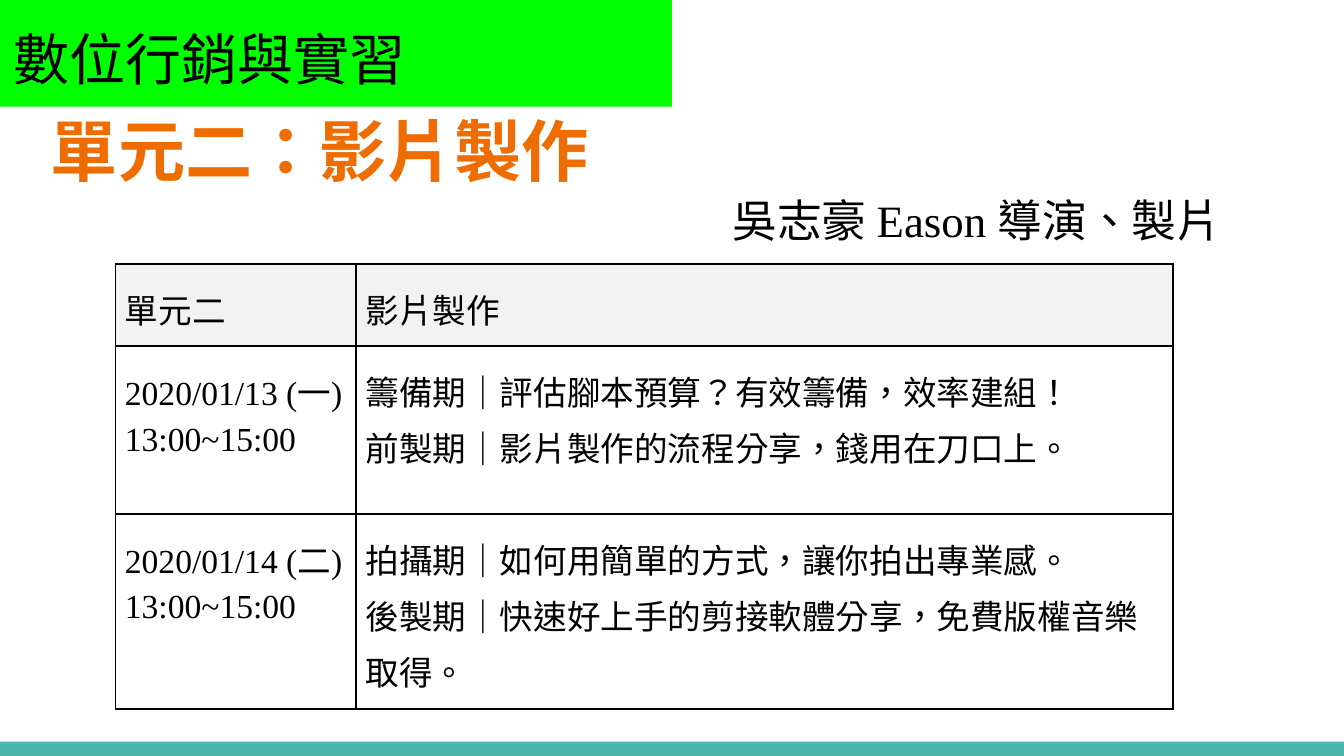
from itertools import groupby

from lxml.etree import SubElement
from pptx import Presentation
from pptx.dml.color import RGBColor
from pptx.enum.shapes import MSO_SHAPE
from pptx.enum.text import MSO_ANCHOR, PP_ALIGN
from pptx.oxml.ns import qn
from pptx.util import Inches, Pt

SLIDE_WIDTH = Inches(10)
SLIDE_HEIGHT = SLIDE_WIDTH * 9 // 16

BLACK = RGBColor(0x00, 0x00, 0x00)
ORANGE = RGBColor(0xEF, 0x6C, 0x00)
GREEN = RGBColor(0x00, 0xFF, 0x00)
TEAL = RGBColor(0x4D, 0xB6, 0xAC)
LIGHT_GRAY = RGBColor(0xF2, 0xF2, 0xF2)

SERIF, SANS, NARROW = "Times New Roman", "Arial", "Arial Narrow"
SANS_CHARACTERS = "一二⽚⽤⼑⼝⽅⼿⾳"  # set in the sans font inside serif text
LANGUAGE = "zh-TW"

SCHEDULE = [
    (["單元二"], ["影⽚製作"]),
    (["2020/01/13 (一)", "13:00~15:00"],
     ["籌備期｜評估腳本預算？有效籌備，效率建組！",
      "前製期｜影⽚製作的流程分享，錢⽤在⼑⼝上。"]),
    (["2020/01/14 (二)", "13:00~15:00"],
     ["拍攝期｜如何⽤簡單的⽅式，讓你拍出專業感。",
      "後製期｜快速好上⼿的剪接軟體分享，免費版權⾳樂取得。"]),
]
COLUMN_WIDTHS = [17.9, 60.8]       # percent of the slide width
ROW_HEIGHTS = [10.9, 22.2, 25.8]   # percent of the slide height


def across(percent):
    return round(SLIDE_WIDTH * percent / 100)


def down(percent):
    return round(SLIDE_HEIGHT * percent / 100)


def area(left, top, width, height):
    """Turn percentages of the slide into a position and size."""
    return across(left), down(top), across(width), down(height)


def write_text(frame, lines, size, font=SERIF, color=BLACK, bold=False,
               line_spacing=1.15, space=0, anchor=MSO_ANCHOR.TOP):
    frame.word_wrap = True
    frame.vertical_anchor = anchor
    for index, line in enumerate(lines):
        paragraph = frame.paragraphs[0] if index == 0 else frame.add_paragraph()
        paragraph.alignment = PP_ALIGN.LEFT
        paragraph.line_spacing = line_spacing
        paragraph.space_before = paragraph.space_after = Pt(space)
        for is_sans, characters in groupby(line, lambda c: c in SANS_CHARACTERS):
            run = paragraph.add_run()
            run.text = "".join(characters)
            run.font.name = SANS if is_sans and font == SERIF else font
            run.font.size = Pt(size)
            run.font.bold = bold
            run.font.color.rgb = color
            run._r.get_or_add_rPr().set("lang", LANGUAGE)


def set_margins(frame):
    frame.margin_left = frame.margin_right = Inches(0.1)
    frame.margin_top = frame.margin_bottom = Inches(0.1)


def add_band(slide, position, color):
    band = slide.shapes.add_shape(MSO_SHAPE.RECTANGLE, *position)
    band.shadow.inherit = False
    band.fill.solid()
    band.fill.fore_color.rgb = color
    band.line.fill.background()
    set_margins(band.text_frame)
    return band


def add_label(slide, position, text, **text_format):
    label = slide.shapes.add_textbox(*position)
    set_margins(label.text_frame)
    write_text(label.text_frame, [text], **text_format)


def add_borders(cell, color, width):
    properties = cell._tc.get_or_add_tcPr()
    for index, side in enumerate(("a:lnL", "a:lnR", "a:lnT", "a:lnB")):
        line = properties.makeelement(qn(side), {"w": str(Pt(width))})
        properties.insert(index, line)  # borders come before the fill
        fill = SubElement(line, qn("a:solidFill"))
        SubElement(fill, qn("a:srgbClr"), val=str(color))


def add_schedule(slide, left, top):
    position = area(left, top, sum(COLUMN_WIDTHS), sum(ROW_HEIGHTS))
    table = slide.shapes.add_table(len(SCHEDULE), len(COLUMN_WIDTHS), *position).table
    table.first_row = table.horz_banding = False
    for column, width in zip(table.columns, COLUMN_WIDTHS):
        column.width = across(width)
    for row_index, (row, height) in enumerate(zip(table.rows, ROW_HEIGHTS)):
        row.height = down(height)
        is_header = row_index == 0
        for cell, lines in zip(row.cells, SCHEDULE[row_index]):
            cell.margin_left = cell.margin_right = Inches(0.07)
            cell.margin_top = cell.margin_bottom = Inches(0.1)
            if is_header:
                cell.fill.solid()
                cell.fill.fore_color.rgb = LIGHT_GRAY
            else:
                cell.fill.background()
            add_borders(cell, BLACK, 1)
            write_text(cell.text_frame, lines, size=18,
                       font=SANS if is_header else SERIF)


def main():
    presentation = Presentation()
    presentation.slide_width, presentation.slide_height = SLIDE_WIDTH, SLIDE_HEIGHT
    slide = presentation.slides.add_slide(presentation.slide_layouts[6])

    # Footer band
    add_band(slide, area(0, 98.1, 100, 1.9), TEAL)

    # Unit title
    add_label(slide, area(2.8, 13, 93.2, 13.7), "單元二：影片製作", size=36,
              font=NARROW, color=ORANGE, bold=True, line_spacing=1,
              anchor=MSO_ANCHOR.MIDDLE)

    # Course banner
    banner = add_band(slide, area(0, 0, 50, 14.1), GREEN)
    write_text(banner.text_frame, ["數位行銷與實習"], size=30, space=9,
               anchor=MSO_ANCHOR.MIDDLE)

    # Schedule and speaker
    add_schedule(slide, 8.6, 34.9)
    add_label(slide, area(53.5, 22.6, 41.9, 58.4), "吳志豪 Eason 導演、製片", size=24)

    presentation.save("out.pptx")


if __name__ == "__main__":
    main()
